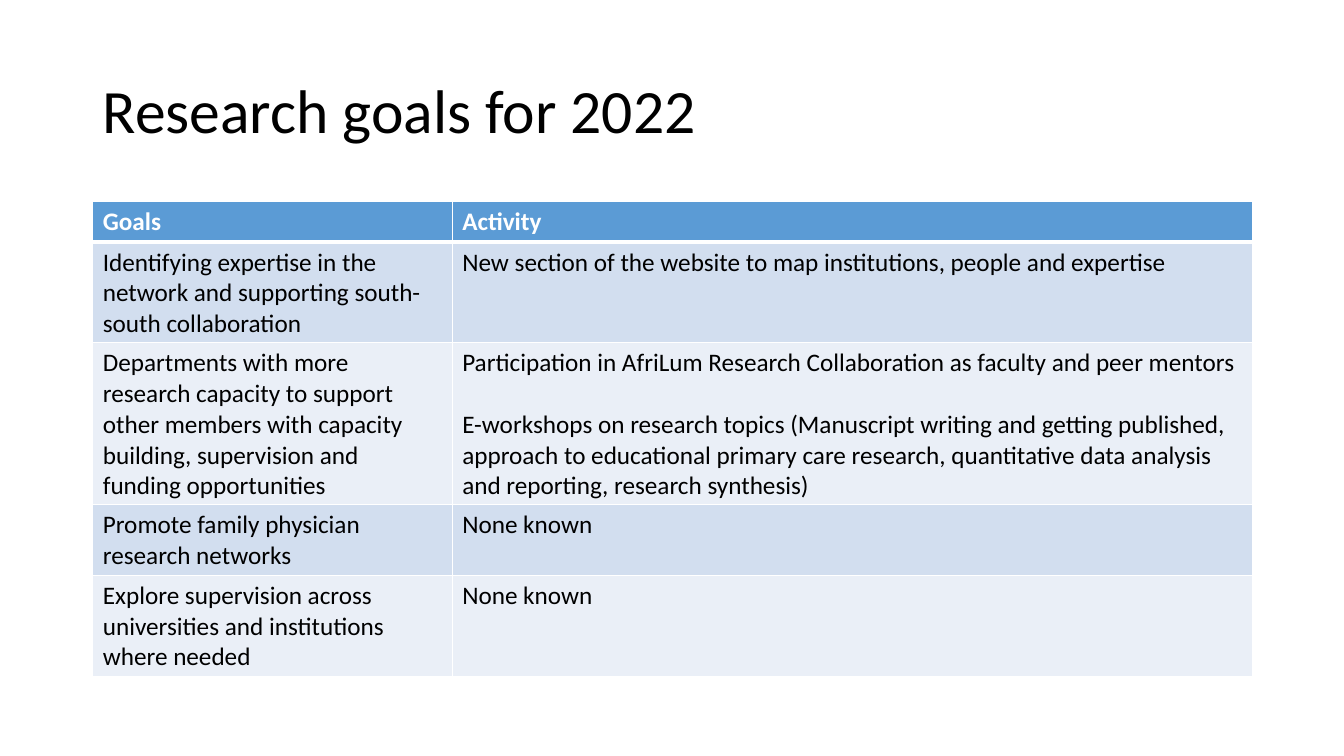
import pptx
import pptx.util
import pptx.dml.color
import pptx.enum.text
import pptx.oxml
import pptx.oxml.ns

Inches = pptx.util.Inches
Pt = pptx.util.Pt

COLORS = {
    "text": "000000",
    "white": "FFFFFF",
    "header": "5B9BD5",
    "band_dark": "D2DEEF",
    "band_light": "EAEFF7",
}
TITLE_FONT = {"name": "Calibri", "size": Pt(44), "bold": False}
HEAD_FONT = {"name": "Calibri", "size": Pt(18), "bold": True}
BODY_FONT = {"name": "Calibri", "size": Pt(18), "bold": False}

# Each row: goal, then the paragraphs of its activity, then its line count
ROWS = [
    ("Goals", ["Activity"], 1),
    ("Identifying expertise in the network and supporting south-south collaboration",
     ["New section of the website to map institutions, people and expertise"], 3),
    ("Departments with more research capacity to support other members with "
     "capacity building, supervision and funding opportunities",
     ["Participation in AfriLum Research Collaboration as faculty and peer mentors",
      "E-workshops on research topics (Manuscript writing and getting published, "
      "approach to educational primary care research, quantitative data analysis "
      "and reporting, research synthesis)"], 5),
    ("Promote family physician research networks", ["None known"], 2),
    ("Explore supervision across universities and institutions where needed",
     ["None known"], 3),
]
GOAL_SHARE = 0.31
LINE_HEIGHT = 0.3
CELL_PADDING = 0.1


def rgb(color):
    return pptx.dml.color.RGBColor.from_string(COLORS[color])


def write_paragraph(p, text, font, color):
    r = p.add_run()
    r.text = text
    for name, value in font.items():
        setattr(r.font, name, value)
    r.font.color.rgb = rgb(color)


def set_borders(cell, bottom):
    tcPr = cell._tc.get_or_add_tcPr()
    widths = {"lnL": 1, "lnR": 1, "lnT": 1, "lnB": bottom}
    for i, (tag, width) in enumerate(widths.items()):
        ln = pptx.oxml.parse_xml(
            f'<a:{tag} {pptx.oxml.ns.nsdecls("a")} w="{Pt(width)}"><a:solidFill>'
            f'<a:srgbClr val="{COLORS["white"]}"/></a:solidFill></a:{tag}>')
        tcPr.insert(i, ln)


def add_title(s, x, y, w, h):
    tf = s.shapes.add_textbox(Inches(x), Inches(y), Inches(w), Inches(h)).text_frame
    tf.word_wrap = True
    tf.vertical_anchor = pptx.enum.text.MSO_ANCHOR.MIDDLE
    p = tf.paragraphs[0]
    p.line_spacing = 0.9
    write_paragraph(p, "Research goals for 2022", TITLE_FONT, "text")


def fill_cell(cell, texts, font, color, fill, bottom):
    cell.fill.solid()
    cell.fill.fore_color.rgb = rgb(fill)
    set_borders(cell, bottom)
    tf = cell.text_frame
    for i, text in enumerate(texts):
        p = tf.add_paragraph() if i else tf.paragraphs[0]
        if i:
            p.space_before = Pt(22)
        write_paragraph(p, text, font, color)


def add_goals_table(s, x, y, w):
    heights = [CELL_PADDING + LINE_HEIGHT * lines for _, _, lines in ROWS]
    frame = s.shapes.add_table(len(ROWS), 2, Inches(x), Inches(y),
                               Inches(w), Inches(sum(heights)))
    table = frame.table
    for column, share in zip(table.columns, (GOAL_SHARE, 1 - GOAL_SHARE)):
        column.width = Inches(w * share)
    for i, (goal, activities, _) in enumerate(ROWS):
        table.rows[i].height = Inches(heights[i])
        if i == 0:
            style = (HEAD_FONT, "white", "header", 3)
        else:
            style = (BODY_FONT, "text", "band_dark" if i % 2 else "band_light", 1)
        for j, texts in enumerate(([goal], activities)):
            fill_cell(table.cell(i, j), texts, *style)
    # White rule under the header, shared with the first body row
    for cell in table.rows[1].cells:
        cell._tc.tcPr.find(pptx.oxml.ns.qn("a:lnT")).set("w", str(Pt(3)))


def main():
    prs = pptx.Presentation()
    prs.slide_width = Inches(13.33)
    prs.slide_height = Inches(7.5)
    s = prs.slides.add_slide(prs.slide_layouts[6])
    add_title(s, 0.92, 0.4, 11.5, 1.45)
    add_goals_table(s, 0.92, 2, 11.5)
    prs.save("out.pptx")


if __name__ == "__main__":
    main()
